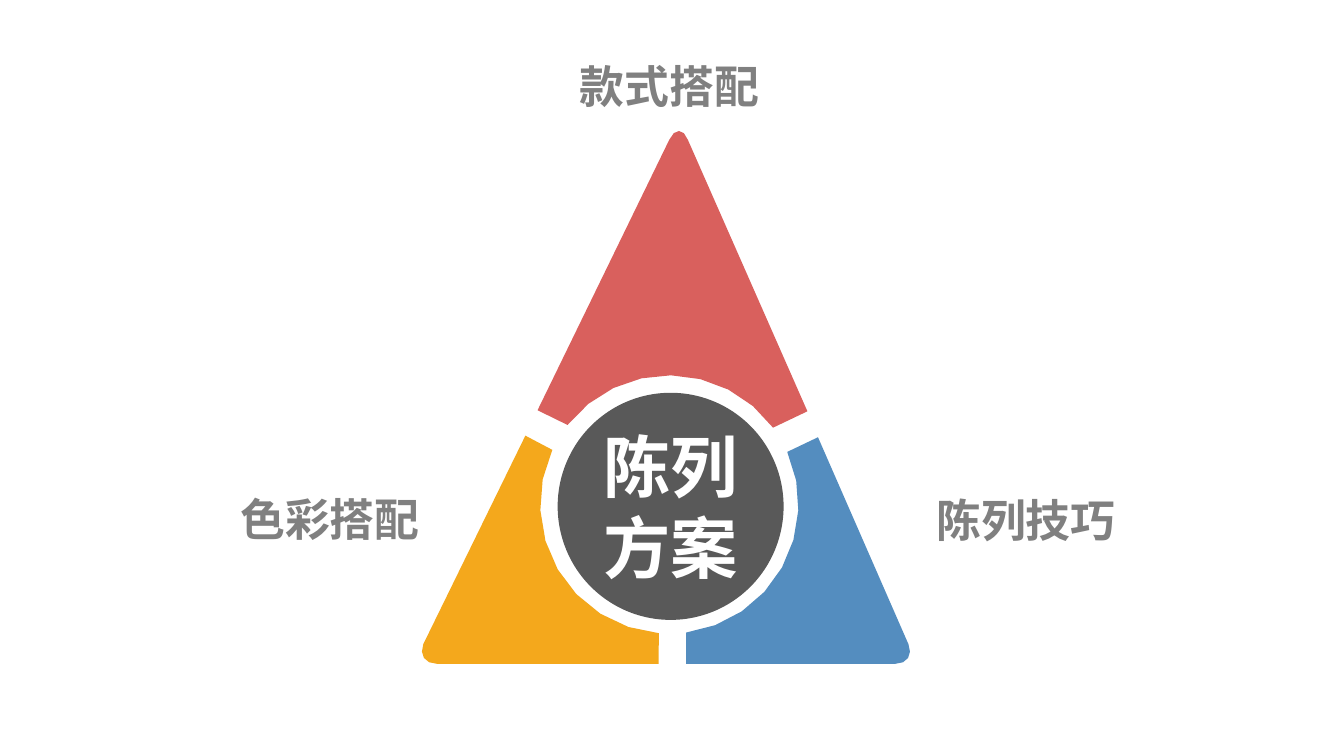
from dataclasses import dataclass
from math import cos, radians, sin

from pptx import Presentation
from pptx.dml.color import RGBColor
from pptx.enum.shapes import MSO_SHAPE as Preset
from pptx.enum.text import MSO_ANCHOR as Anchor, PP_ALIGN as Align
from pptx.oxml.ns import qn
from pptx.util import Cm, Pt


@dataclass(frozen=True)
class Theme:
    font: str = "Noto Sans CJK SC"
    red: str = "D9605D"
    orange: str = "F4A81C"
    blue: str = "548DBF"
    hub: str = "595959"
    hub_text: str = "FFFFFF"
    label: str = "808080"
    hub_size: int = 36
    label_size: int = 24


@dataclass(frozen=True)
class Sector:
    """Triangle part: rounded tip, corner, arc around the hub, corner."""
    color: str
    tip: tuple
    before_arc: tuple
    angles: tuple
    after_arc: tuple


THEME = Theme()
CENTER = (12.65, 9.53)
RING_RADIUS = 2.44

SECTORS = (
    Sector(THEME.red,
           ((12.65, 2.64), (12.75, 2.42), (12.92, 2.42), (13.0, 2.64)),
           (15.26, 7.77), (-36.5, -142), (10.16, 7.75)),
    Sector(THEME.orange,
           ((8.26, 12.54), (8.03, 12.54), (7.92, 12.37), (8.0, 12.17)),
           (9.93, 8.23), (205, 94.7), (12.45, 12.54)),
    Sector(THEME.blue,
           ((17.17, 12.17), (17.25, 12.37), (17.15, 12.54), (16.92, 12.54)),
           (12.97, 12.54), (82.5, -24), (15.46, 8.26)),
)

# text, left, top, width, alignment
LABELS = (
    (" 色彩搭配", 1.78, 9.29, 6.15, Align.RIGHT),
    (" 款式搭配", 10.77, 1.11, 9.22, Align.LEFT),
    ("陈列技巧", 15.34, 9.3, 8.1, Align.CENTER),
)


def curve(controls, steps=4):
    """Points along a cubic Bezier curve."""
    for step in range(steps + 1):
        t = step / steps
        weights = ((1 - t) ** 3, 3 * t * (1 - t) ** 2, 3 * t * t * (1 - t), t ** 3)
        yield tuple(sum(w * point[axis] for w, point in zip(weights, controls))
                    for axis in (0, 1))


def arc(start, end, steps=8):
    """Points along the ring around the hub; angles are clockwise degrees."""
    for step in range(steps + 1):
        angle = radians(start + (end - start) * step / steps)
        yield (CENTER[0] + RING_RADIUS * cos(angle),
               CENTER[1] + RING_RADIUS * sin(angle))


def paint(shape, color):
    shape.shadow.inherit = False
    shape.fill.solid()
    shape.fill.fore_color.rgb = RGBColor.from_string(color)
    shape.line.fill.background()


def add_run(paragraph, text, size, color):
    run = paragraph.add_run()
    run.text = text
    font = run.font
    font.name, font.size, font.bold = THEME.font, Pt(size), True
    font.color.rgb = RGBColor.from_string(color)
    latin = run._r.rPr.find(qn("a:latin"))
    east_asian = latin.makeelement(qn("a:ea"), {"typeface": THEME.font})
    latin.addnext(east_asian)


def add_hub(shapes, lines):
    hub = shapes.add_shape(Preset.OVAL, Cm(10.54), Cm(7.42), Cm(4.27), Cm(4.29))
    paint(hub, THEME.hub)
    frame = hub.text_frame
    frame.word_wrap = False
    frame.vertical_anchor = Anchor.MIDDLE
    for index, line in enumerate(lines):
        paragraph = frame.add_paragraph() if index else frame.paragraphs[0]
        paragraph.alignment = Align.CENTER
        add_run(paragraph, line, THEME.hub_size, THEME.hub_text)


def add_sector(shapes, sector):
    outline = [*curve(sector.tip), sector.before_arc,
               *arc(*sector.angles), sector.after_arc]
    points = [(Cm(x), Cm(y)) for x, y in outline]
    builder = shapes.build_freeform(*points[0])
    builder.add_line_segments(points[1:], close=True)
    paint(builder.convert_to_shape(), sector.color)


def add_label(shapes, text, left, top, width, alignment):
    box = shapes.add_textbox(Cm(left), Cm(top), Cm(width), Cm(0.38))
    frame = box.text_frame
    frame.word_wrap = True
    frame.margin_left = frame.margin_top = 0
    frame.margin_right = frame.margin_bottom = 0
    paragraph = frame.paragraphs[0]
    paragraph.alignment = alignment
    add_run(paragraph, text, THEME.label_size, THEME.label)


def main():
    presentation = Presentation()
    presentation.slide_width, presentation.slide_height = Cm(25.4), Cm(14.28)
    slide = presentation.slides.add_slide(presentation.slide_layouts[6])
    triangle = slide.shapes.add_group_shape().shapes
    add_hub(triangle, ("陈列", "方案"))
    for sector in SECTORS:
        add_sector(triangle, sector)
    for label in LABELS:
        add_label(slide.shapes, *label)
    presentation.save("out.pptx")


if __name__ == "__main__":
    main()
